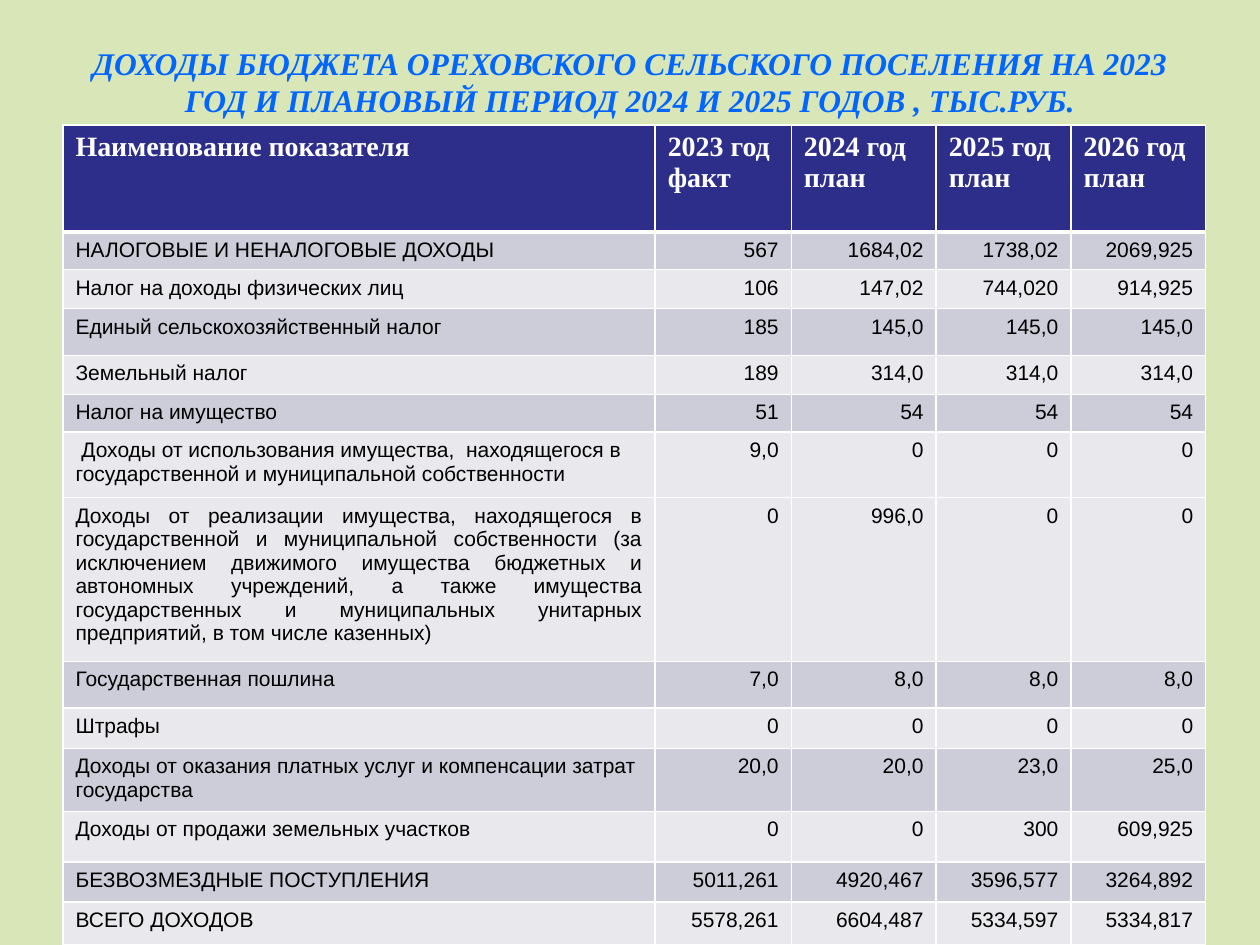
"""Build a slide with the budget revenue table of a rural settlement."""
from lxml.etree import SubElement
from pptx import Presentation
from pptx.dml.color import RGBColor
from pptx.enum.text import MSO_ANCHOR as Anchor, PP_ALIGN as Align
from pptx.oxml.ns import qn
from pptx.util import Inches, Pt

COLORS = {
    "background": "D9E6B8",
    "title": "0066FF",
    "header": "2D2D8A",
    "dark_band": "CDCDDA",
    "light_band": "E8E8ED",
    "white": "FFFFFF",
    "black": "000000",
}
HEADINGS = ["Наименование показателя", "2023 год\nфакт", "2024 год\nплан", "2025 год\nплан", "2026 год план"]
REVENUES = [
    ("НАЛОГОВЫЕ И НЕНАЛОГОВЫЕ ДОХОДЫ", "567", "1684,02", "1738,02", "2069,925"),
    ("Налог на доходы физических лиц", "106", "147,02", "744,020", "914,925"),
    ("Единый сельскохозяйственный налог", "185", "145,0", "145,0", "145,0"),
    ("Земельный налог", "189", "314,0", "314,0", "314,0"),
    ("Налог на имущество", "51", "54", "54", "54"),
    (" Доходы от использования имущества,  находящегося в государственной и муниципальной собственности",
     "9,0", "0", "0", "0"),
    ("Доходы от реализации имущества, находящегося в государственной и муниципальной собственности "
     "(за исключением движимого имущества бюджетных и автономных учреждений, а также имущества "
     "государственных и муниципальных унитарных предприятий, в том числе казенных)",
     "0", "996,0", "0", "0"),
    ("Государственная пошлина", "7,0", "8,0", "8,0", "8,0"),
    ("Штрафы", "0", "0", "0", "0"),
    ("Доходы от оказания платных услуг и компенсации затрат государства", "20,0", "20,0", "23,0", "25,0"),
    ("Доходы от продажи земельных участков", "0", "0", "300", "609,925"),
    ("БЕЗВОЗМЕЗДНЫЕ ПОСТУПЛЕНИЯ", "5011,261", "4920,467", "3596,577", "3264,892"),
    ("ВСЕГО ДОХОДОВ", "5578,261", "6604,487", "5334,597", "5334,817"),
]
COLUMN_WIDTHS = [4.7, 1.08, 1.15, 1.07, 1.07]
ROW_HEIGHTS = [0.85, 0.3, 0.31, 0.37, 0.31, 0.29, 0.52, 1.22, 0.37, 0.32, 0.47, 0.4, 0.32, 0.34]
JUSTIFIED_ROW = 7
LIGHT_ROWS = {2, 4, 6, 7, 9, 11, 13}


def write_text(frame, text, font="Arial", size=12, color="black", bold=False, italic=False, align=Align.LEFT):
    frame.word_wrap = True
    for index, line in enumerate(text.split("\n")):
        paragraph = frame.add_paragraph() if index else frame.paragraphs[0]
        paragraph.alignment = align
        run = paragraph.add_run()
        run.text = line
        run.font.name = font
        run.font.size = Pt(size)
        run.font.bold = bold
        run.font.italic = italic
        run.font.color.rgb = RGBColor.from_string(COLORS[color])


def add_borders(cell, **widths):
    properties = cell._tc.get_or_add_tcPr()
    for side, width in widths.items():
        line = SubElement(properties, qn(f"a:ln{side}"), w=str(Pt(width)))
        fill = SubElement(line, qn("a:solidFill"))
        SubElement(fill, qn("a:srgbClr"), val=COLORS["white"])


presentation = Presentation()
presentation.slide_width = Inches(10)
presentation.slide_height = Inches(7.5)
slide = presentation.slides.add_slide(presentation.slide_layouts[6])
slide.background.fill.solid()
slide.background.fill.fore_color.rgb = RGBColor.from_string(COLORS["background"])

title = slide.shapes.add_textbox(Inches(0.5), Inches(0.3), Inches(9), Inches(0.69))
title.text_frame.vertical_anchor = Anchor.MIDDLE
write_text(
    title.text_frame,
    "ДОХОДЫ БЮДЖЕТА ОРЕХОВСКОГО СЕЛЬСКОГО ПОСЕЛЕНИЯ НА 2023 ГОД И ПЛАНОВЫЙ ПЕРИОД 2024 И 2025 ГОДОВ , ТЫС.РУБ.",
    font="Times New Roman", size=18, color="title", bold=True, italic=True, align=Align.CENTER,
)

rows = [HEADINGS, *REVENUES]
table = slide.shapes.add_table(
    len(rows), len(HEADINGS), Inches(0.5), Inches(0.99),
    Inches(sum(COLUMN_WIDTHS)), Inches(sum(ROW_HEIGHTS)),
).table
for column, width in zip(table.columns, COLUMN_WIDTHS):
    column.width = Inches(width)
for row, height in zip(table.rows, ROW_HEIGHTS):
    row.height = Inches(height)

for row_index, texts in enumerate(rows):
    is_header = row_index == 0
    band = "header" if is_header else "light_band" if row_index in LIGHT_ROWS else "dark_band"
    top = 3 if row_index == 1 else 0.96
    bottom = 3 if is_header else 0.96
    for column_index, text in enumerate(texts):
        cell = table.cell(row_index, column_index)
        add_borders(cell, L=0.96, R=0.96, T=top, B=bottom)
        cell.fill.solid()
        cell.fill.fore_color.rgb = RGBColor.from_string(COLORS[band])
        if is_header:
            write_text(cell.text_frame, text, font="Times New Roman", size=16, color="white", bold=True)
        elif column_index:
            write_text(cell.text_frame, text, align=Align.RIGHT)
        else:
            write_text(cell.text_frame, text, align=Align.JUSTIFY if row_index == JUSTIFIED_ROW else Align.LEFT)

presentation.save("out.pptx")
